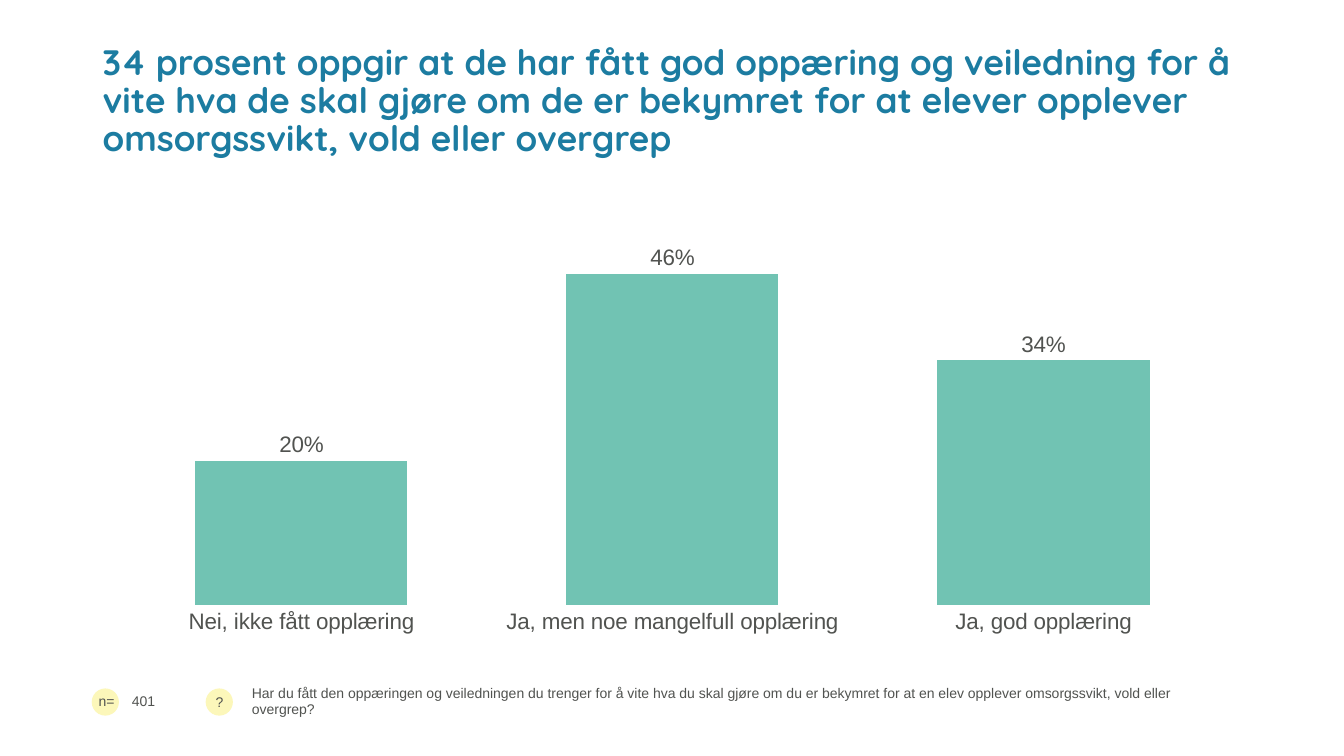
from pptx import Presentation
from pptx.chart.data import CategoryChartData
from pptx.dml.color import RGBColor
from pptx.enum.chart import XL_CHART_TYPE, XL_LABEL_POSITION, XL_TICK_MARK
from pptx.enum.shapes import MSO_SHAPE
from pptx.enum.text import MSO_ANCHOR
from pptx.util import Inches, Pt

BLUE = RGBColor(0x1C, 0x7C, 0xA1)
GREY = RGBColor(0x51, 0x53, 0x50)
GREEN = RGBColor(0x71, 0xC3, 0xB3)
YELLOW = RGBColor(0xFC, 0xF7, 0xBA)

TITLE = ("34 prosent oppgir at de har fått god oppæring og veiledning for å vite hva "
         "de skal gjøre om de er bekymret for at elever opplever omsorgssvikt, vold "
         "eller overgrep")
QUESTION = ("Har du fått den oppæringen og veiledningen du trenger for å vite hva du skal "
            "gjøre om du er bekymret for at en elev opplever omsorgssvikt, vold eller "
            "overgrep?")
ANSWERS = {
    "Nei, ikke fått opplæring": 0.20,
    "Ja, men noe mangelfull opplæring": 0.46,
    "Ja, god opplæring": 0.34,
}

LEFT, WIDTH = 0.92, 11.5
FOOT_TOP, DOT = 6.83, 0.27
DOT_LEFTS = [0.91, 2.04]

TITLE_FONT = {"name": "Quicksand", "size": Pt(25.2), "bold": True}
SMALL_FONT = {"name": "Arial", "size": Pt(10)}
CHART_FONT = {"name": "Arial", "size": Pt(16)}

# text, (left, top, width, height), font, colour, anchor, line spacing
TEXTS = [
    ("n=", (0.88, 6.82, 0.45, DOT), SMALL_FONT, GREY, MSO_ANCHOR.TOP, 1.0),
    ("?", (2.04, FOOT_TOP, 0.25, DOT), SMALL_FONT, GREY, MSO_ANCHOR.TOP, 1.0),
    (TITLE, (LEFT, 0.4, WIDTH, 1.08), TITLE_FONT, BLUE, MSO_ANCHOR.TOP, 0.9),
    (QUESTION, (2.4, FOOT_TOP, 9.91, DOT), SMALL_FONT, GREY, MSO_ANCHOR.MIDDLE, 0.9),
    ("401", (1.21, FOOT_TOP, 0.74, DOT), SMALL_FONT, GREY, MSO_ANCHOR.MIDDLE, 0.9),
]


def set_font(font, values, color):
    for name, value in values.items():
        setattr(font, name, value)
    font.color.rgb = color


def add_dot(slide, left):
    sp = slide.shapes.add_shape(MSO_SHAPE.OVAL, Inches(left), Inches(FOOT_TOP),
                                Inches(DOT), Inches(DOT))
    sp.shadow.inherit = False
    sp.fill.solid()
    sp.fill.fore_color.rgb = YELLOW
    sp.line.fill.background()


def add_text(slide, text, box, font, color, anchor, spacing):
    tf = slide.shapes.add_textbox(*map(Inches, box)).text_frame
    tf.word_wrap = True
    tf.vertical_anchor = anchor
    p = tf.paragraphs[0]
    p.line_spacing = spacing
    r = p.add_run()
    r.text = text
    set_font(r.font, font, color)


def add_answer_chart(slide):
    data = CategoryChartData(number_format="0%")
    data.categories = list(ANSWERS)
    data.add_series("Series 1", list(ANSWERS.values()))
    chart = slide.shapes.add_chart(
        XL_CHART_TYPE.COLUMN_CLUSTERED, Inches(LEFT), Inches(1.62),
        Inches(WIDTH), Inches(4.76), data).chart
    chart.has_legend = False
    chart.has_title = False
    set_font(chart.font, {"name": "Arial", "size": Pt(18)}, GREY)

    cat = chart.category_axis
    cat.major_tick_mark = XL_TICK_MARK.NONE
    cat.format.line.fill.background()
    set_font(cat.tick_labels.font, CHART_FONT, GREY)

    val = chart.value_axis
    val.visible = False
    val.has_major_gridlines = False
    val.minimum_scale, val.maximum_scale, val.major_unit = 0, 0.6, 0.2
    val.tick_labels.number_format = "0%"
    val.tick_labels.number_format_is_linked = False

    plot = chart.plots[0]
    plot.vary_by_categories = False
    plot.gap_width = 75
    series = plot.series[0]
    series.format.fill.solid()
    series.format.fill.fore_color.rgb = GREEN
    labels = series.data_labels
    labels.show_value = True
    labels.number_format = "0%"
    labels.number_format_is_linked = False
    labels.position = XL_LABEL_POSITION.OUTSIDE_END
    set_font(labels.font, CHART_FONT, GREY)


def main():
    prs = Presentation()
    prs.slide_width, prs.slide_height = Inches(13.33), Inches(7.5)
    slide = prs.slides.add_slide(prs.slide_layouts[6])
    for left in DOT_LEFTS:
        add_dot(slide, left)
    add_answer_chart(slide)
    for item in TEXTS:
        add_text(slide, *item)
    prs.save("out.pptx")


if __name__ == "__main__":
    main()
